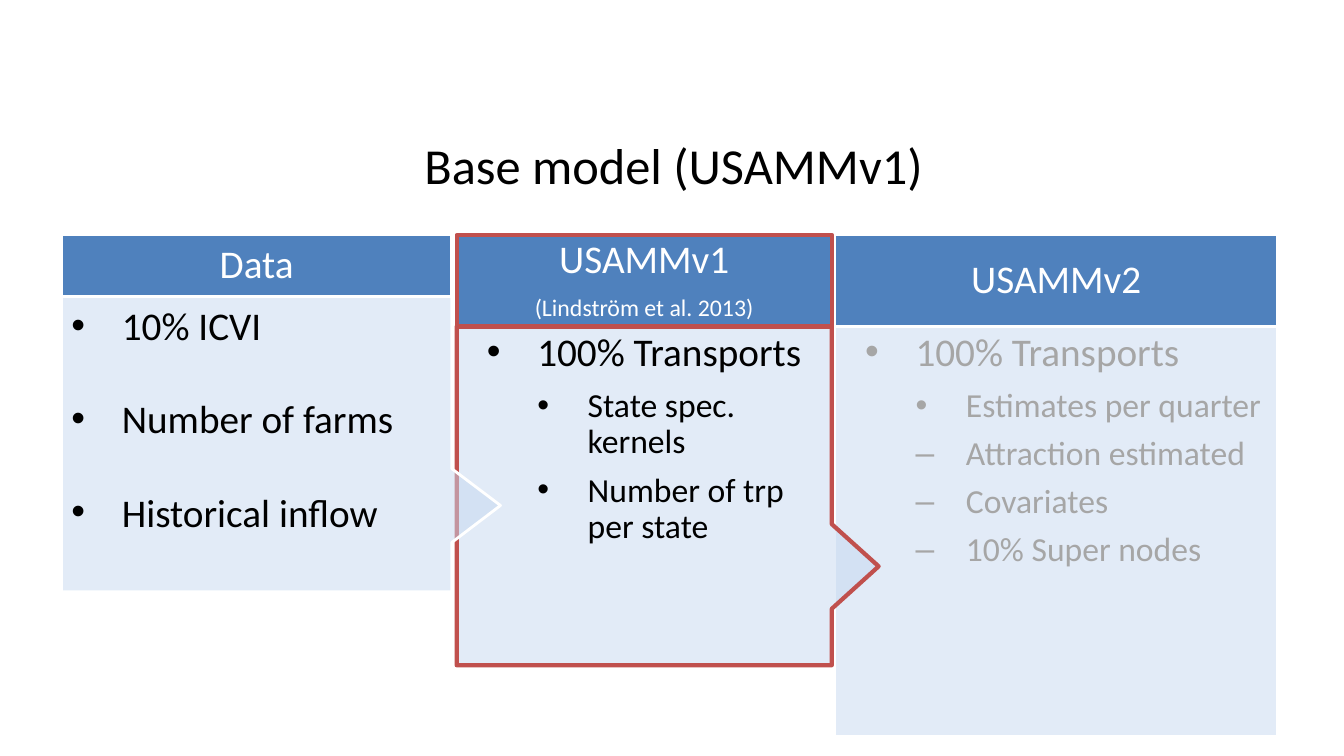
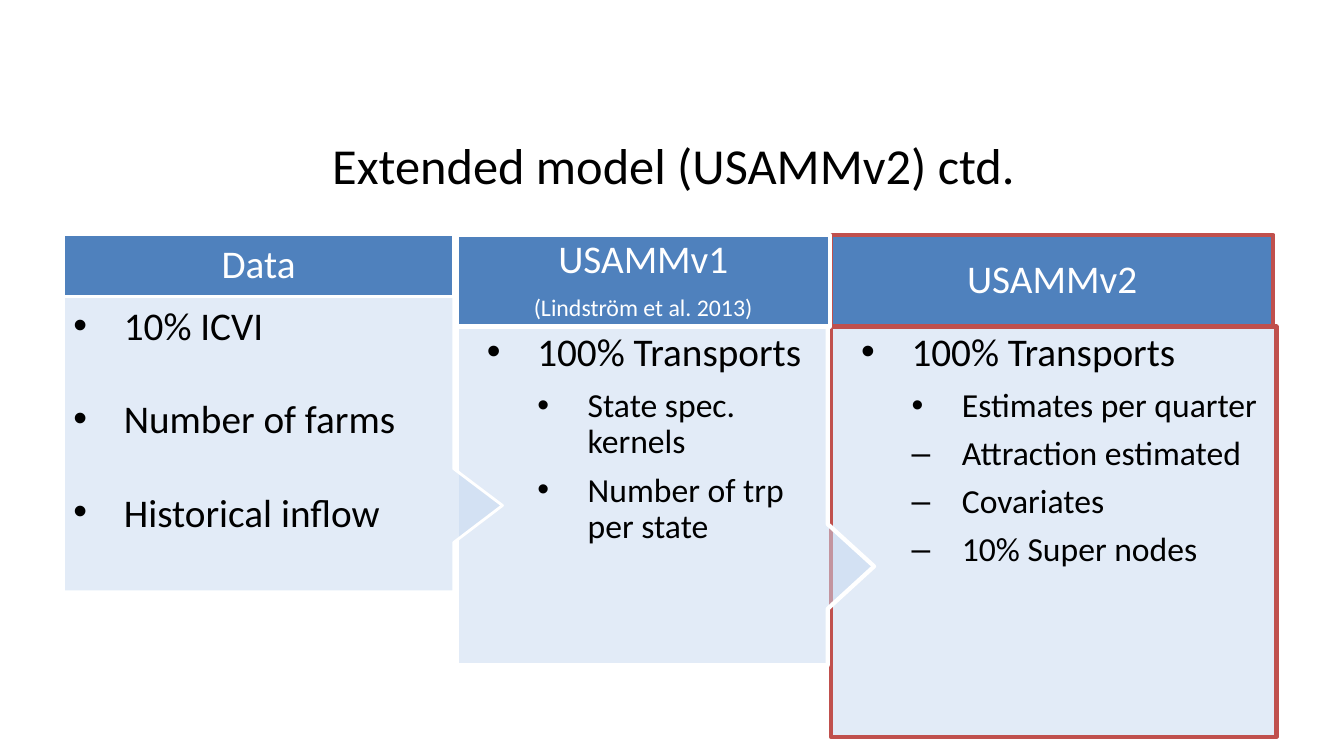
import pptx
import pptx.util
import pptx.dml.color
import pptx.enum.shapes
import pptx.enum.text
import pptx.oxml.ns
import lxml.etree

WIDE, HIGH = 13.33, 7.5
FONT = "Calibri"
BLACK, WHITE, GREY = "000000", "FFFFFF", "A6A6A6"
BLUE, PALE, RED = "4F81BD", "C6D9F1", "C0504D"
TOP = 31.07
RECT = pptx.enum.shapes.MSO_SHAPE.RECTANGLE
CALL = pptx.enum.shapes.MSO_SHAPE.RECTANGULAR_CALLOUT
MID = pptx.enum.text.MSO_ANCHOR.MIDDLE
HIGHEST = pptx.enum.text.MSO_ANCHOR.TOP
LEFT = pptx.enum.text.PP_ALIGN.LEFT
CENTER = pptx.enum.text.PP_ALIGN.CENTER

DATA = {
    "head": [("Data", 28)],
    "body": [("10% ICVI", 28, "•", 0), ("Number of farms", 28, "•", 0),
             ("Historical inflow", 28, "•", 0)],
    "rows": (8.13, 39.07), "shape": CALL,
    "style": {"pad": (0.1, 0.05), "gap": 33},
}
FIRST = {
    "head": [("USAMMv1", 28), ("(Lindström et al. 2013)", 17)],
    "body": [("100% Transports", 28, "•", 0), ("State spec. kernels", 24, "•", 1),
             ("Number of trp per state", 24, "•", 1)],
    "rows": (12.13, 44.8), "shape": CALL,
    "style": {"pad": (0.3, 0.06), "lead": 0.9},
}
NEXT = {
    "head": [("USAMMv2", 28)],
    "body": [("100% Transports", 28, "•", 0), ("Estimates per quarter", 24, "•", 1),
             ("Attraction estimated", 24, "‒", 1), ("Covariates", 24, "‒", 1),
             ("10% Super nodes", 24, "‒", 1)],
    "rows": (12.13, 54.27), "shape": RECT,
    "style": {"pad": (0.3, 0.06), "lead": 0.9},
}


def tint(code):
    return pptx.dml.color.RGBColor.from_string(code)


def place(x, y, w, h):
    return [pptx.util.Inches(part * size / 100)
            for part, size in zip((x, y, w, h), (WIDE, HIGH, WIDE, HIGH))]


def mark(para, sign, level):
    props = para._p.get_or_add_pPr()
    props.set("marL", str(pptx.util.Inches(0.5 * (level + 1))))
    props.set("indent", str(-pptx.util.Inches(0.5)))
    if level:
        props.set("lvl", str(level))
    for tag, key, value in (("a:buFont", "typeface", "Arial"), ("a:buChar", "char", sign)):
        lxml.etree.SubElement(props, pptx.oxml.ns.qn(tag)).set(key, value)


def write(shape, lines, color=BLACK, align=LEFT, anchor=HIGHEST,
          pad=(0.06, 0.06), lead=1, gap=None):
    frame = shape.text_frame
    frame.word_wrap = True
    frame.vertical_anchor = anchor
    frame.margin_left = pptx.util.Inches(pad[0])
    frame.margin_right = frame.margin_top = frame.margin_bottom = pptx.util.Inches(pad[1])
    for index, (text, size, *sign) in enumerate(lines):
        para = frame.paragraphs[0] if index == 0 else frame.add_paragraph()
        para.alignment = align
        para.line_spacing = lead
        para.space_after = pptx.util.Pt(round(0.35 * size, 1) if gap is None else gap)
        if sign:
            mark(para, *sign)
        run = para.add_run()
        run.text = text
        run.font.name = FONT
        run.font.size = pptx.util.Pt(size)
        run.font.color.rgb = tint(color)


def panel(slide, kind, box, fill, edge, alpha=None):
    shape = slide.shapes.add_shape(kind, *place(*box))
    shape.shadow.inherit = False
    shape.fill.solid()
    shape.fill.fore_color.rgb = tint(fill)
    if alpha:
        color = shape._element.spPr.find(".//" + pptx.oxml.ns.qn("a:srgbClr"))
        lxml.etree.SubElement(color, pptx.oxml.ns.qn("a:alpha")).set("val", str(alpha * 1000))
    shape.line.color.rgb = tint(edge[0])
    shape.line.width = pptx.util.Pt(edge[1])
    if kind == CALL:
        shape.adjustments[0] = 0.625
        shape.adjustments[1] = 0.208
    return shape


def column(slide, part, x, wide, edge, cap=None, color=BLACK):
    head, body = part["rows"]
    block = panel(slide, part["shape"], (x, TOP + head, wide, body), PALE, edge, alpha=50)
    write(block, part["body"], color=color, **part["style"])
    label = panel(slide, RECT, (x, TOP, cap or wide, head), BLUE, edge)
    write(label, part["head"], color=WHITE, align=CENTER, anchor=MID, lead=0.9)


def page(deck, title):
    slide = deck.slides.add_slide(deck.slide_layouts[6])
    box = slide.shapes.add_textbox(*place(4.95, 13.47, 90, 16.67))
    write(box, [(title, 36)], align=CENTER, anchor=MID, pad=(0.1, 0.05), gap=0)
    return slide


def main():
    deck = pptx.Presentation()
    deck.slide_width = pptx.util.Inches(WIDE)
    deck.slide_height = pptx.util.Inches(HIGH)
    thin, thick, hot = (WHITE, 2), (WHITE, 3), (RED, 3)

    base = page(deck, "Base model (USAMMv1)")
    column(base, NEXT, 62.12, 32.93, thin, color=GREY)
    column(base, FIRST, 33.98, 27.91, hot)
    column(base, DATA, 4.58, 29.03, thin)

    more = page(deck, "Extended model (USAMMv2) ctd.")
    column(more, NEXT, 61.82, 33.16, hot, cap=32.93)
    column(more, FIRST, 33.98, 27.61, thick, cap=27.76)
    column(more, DATA, 4.73, 29.03, thin)

    deck.save("out.pptx")


if __name__ == "__main__":
    main()
